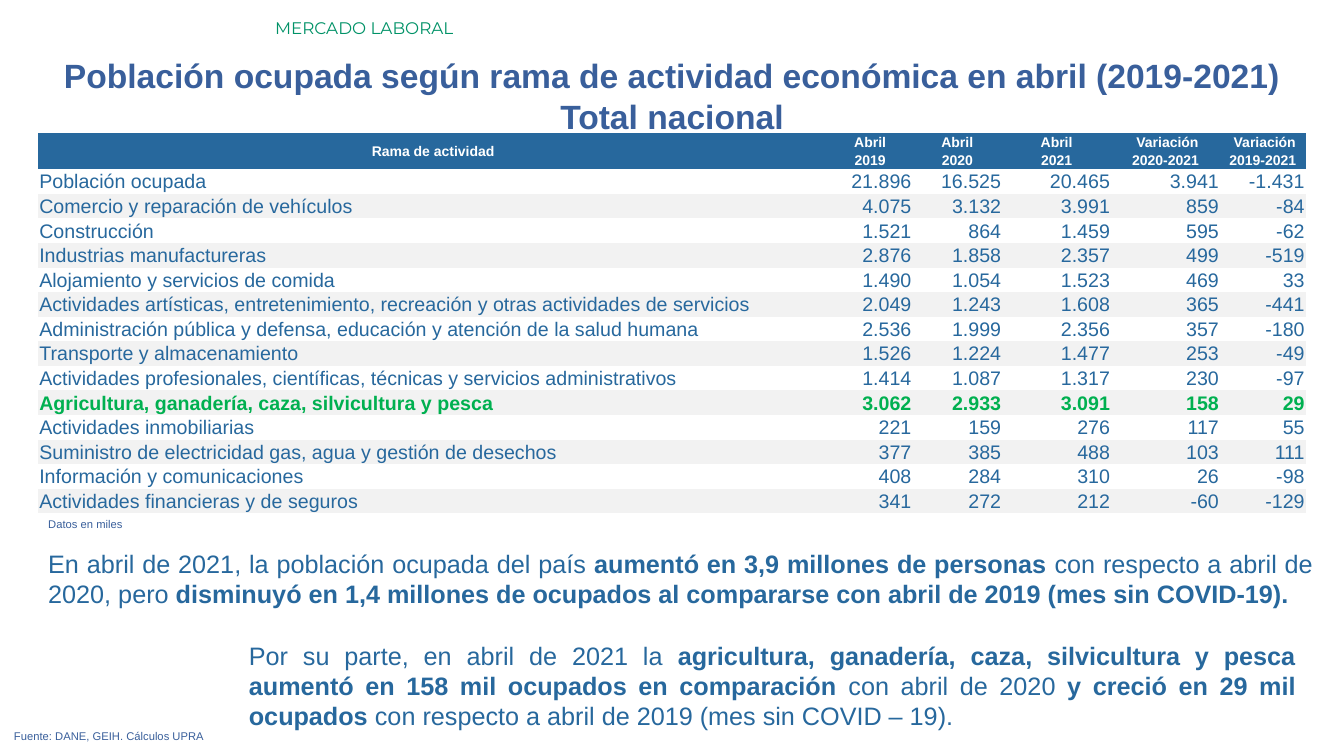
from dataclasses import dataclass

from pptx import Presentation
from pptx.dml.color import RGBColor
from pptx.enum import text
from pptx.oxml import ns
from pptx.util import Inches, Pt

LEFT, CENTER, RIGHT, JUSTIFY = (
    text.PP_ALIGN.LEFT, text.PP_ALIGN.CENTER, text.PP_ALIGN.RIGHT, text.PP_ALIGN.JUSTIFY)


@dataclass(frozen=True)
class Theme:
    blue: str = "27689D"
    title_blue: str = "395F9B"
    teal: str = "009267"
    green: str = "00B050"
    white: str = "FFFFFF"
    band: str = "F2F2F2"
    font: str = "Arial"
    label_font: str = "Montserrat"
    title_size: int = 24
    body_size: int = 18
    cell_size: int = 14
    label_size: int = 12
    header_size: int = 10
    note_size: int = 8
    plain_table: str = "{2D5ABB26-0587-4C30-8999-92F81FD0307C}"


class SlideBuilder:
    def __init__(self, page, theme):
        self.page = page
        self.theme = theme

    def add_span(self, para, words, size, color, bold=False, font=None):
        span = para.add_run()
        span.text = words
        span.font.name = font or self.theme.font
        span.font.size = Pt(size)
        span.font.bold = bold
        span.font.color.rgb = RGBColor.from_string(color)

    def add_text(self, bounds, paragraphs, size, color, align=JUSTIFY, font=None):
        box = self.page.shapes.add_textbox(*map(Inches, bounds))
        frame = box.text_frame
        frame.word_wrap = True
        frame.auto_size = text.MSO_AUTO_SIZE.SHAPE_TO_FIT_TEXT
        for index, spans in enumerate(paragraphs):
            para = frame.add_paragraph() if index else frame.paragraphs[0]
            para.alignment = align
            for words, bold in spans:
                self.add_span(para, words, size, color, bold, font)

    def fill_cell(self, cell, words, size, color, align, bold, fill):
        cell.margin_left = cell.margin_right = cell.margin_top = Inches(0.01)
        cell.margin_bottom = 0
        cell.vertical_anchor = text.MSO_ANCHOR.MIDDLE
        if fill:
            cell.fill.solid()
            cell.fill.fore_color.rgb = RGBColor.from_string(fill)
        else:
            cell.fill.background()
        para = cell.text_frame.paragraphs[0]
        para.alignment = align
        if words:
            self.add_span(para, words, size, color, bold)

    def add_table(self, bounds, widths, header, rows, highlight):
        theme = self.theme
        count = len(header) + len(rows)
        frame = self.page.shapes.add_table(count, len(widths), *map(Inches, bounds))
        table = frame.table
        table.first_row = table.horz_banding = False
        frame.element.find(".//" + ns.qn("a:tableStyleId")).text = theme.plain_table
        for column, width in zip(table.columns, widths):
            column.width = Inches(width)
        header_height = 0.18
        body_height = (bounds[3] - header_height * len(header)) / len(rows)
        for index, row in enumerate(table.rows):
            row.height = Inches(header_height if index < len(header) else body_height)
        for index, labels in enumerate(header):
            for column, words in enumerate(labels):
                self.fill_cell(table.cell(index, column), words, theme.header_size,
                               theme.white, CENTER, True, theme.blue)
        table.cell(0, 0).merge(table.cell(len(header) - 1, 0))
        for index, values in enumerate(rows):
            special = values[0] == highlight
            for column, words in enumerate(values):
                self.fill_cell(table.cell(index + len(header), column), words,
                               theme.cell_size, theme.green if special else theme.blue,
                               RIGHT if column else LEFT, special,
                               theme.band if index % 2 else None)


HEADER = [
    (" Rama de actividad ", "Abril", "Abril", "Abril", " Variación", " Variación"),
    ("", "2019", "2020", "2021", "2020-2021", "2019-2021"),
]
FARMING = "Agricultura, ganadería, caza, silvicultura y pesca"
ROWS = [
    ("Población ocupada", "21.896", "16.525", "20.465", "3.941", "-1.431"),
    ("Comercio y reparación de vehículos", "4.075", "3.132", "3.991", "859", "-84"),
    ("Construcción", "1.521", "864", "1.459", "595", "-62"),
    ("Industrias manufactureras", "2.876", "1.858", "2.357", "499", "-519"),
    ("Alojamiento y servicios de comida", "1.490", "1.054", "1.523", "469", "33"),
    ("Actividades artísticas, entretenimiento, recreación y otras actividades de servicios",
     "2.049", "1.243", "1.608", "365", "-441"),
    ("Administración pública y defensa, educación y atención de la salud humana",
     "2.536", "1.999", "2.356", "357", "-180"),
    ("Transporte y almacenamiento", "1.526", "1.224", "1.477", "253", "-49"),
    ("Actividades profesionales, científicas, técnicas y servicios administrativos",
     "1.414", "1.087", "1.317", "230", "-97"),
    (FARMING, "3.062", "2.933", "3.091", "158", "29"),
    ("Actividades inmobiliarias", "221", "159", "276", "117", "55"),
    ("Suministro de electricidad gas, agua y gestión de desechos",
     "377", "385", "488", "103", "111"),
    ("Información y comunicaciones", "408", "284", "310", "26", "-98"),
    ("Actividades financieras y de seguros", "341", "272", "212", "-60", "-129"),
]
NATIONAL = [
    ("En abril de 2021, la población ocupada del país ", False),
    ("aumentó en 3,9 millones de personas ", True),
    ("con respecto a abril de 2020, pero ", False),
    ("disminuyó en 1,4 millones de ocupados al compararse con abril de 2019 "
     "(mes sin COVID-19).", True),
]
RURAL = [
    ("Por su parte, en abril de 2021 la", False),
    (" agricultura, ganadería, caza, silvicultura y pesca aumentó en 158 mil ocupados "
     "en comparación ", True),
    ("con abril de 2020", False),
    (" y creció en 29 mil ocupados ", True),
    ("con respecto a abril de 2019 (mes sin COVID – 19).", False),
]
TITLE = [
    [("Población ocupada según rama de actividad económica en abril (2019-2021)", True)],
    [("Total nacional", True)],
]


def main():
    deck = Presentation()
    deck.slide_width, deck.slide_height = Inches(13.33), Inches(7.5)
    theme = Theme()
    builder = SlideBuilder(deck.slides.add_slide(deck.slide_layouts[6]), theme)
    builder.add_text((2.63, 0.13, 10.7, 0.3), [[("MERCADO LABORAL", False)]],
                     theme.label_size, theme.teal, LEFT, theme.label_font)
    builder.add_text((0, 0.5, 13.33, 0.91), TITLE, theme.title_size, theme.title_blue, CENTER)
    builder.add_text((0.38, 5.39, 12.74, 0.71), [NATIONAL], theme.body_size, theme.blue)
    builder.add_text((0.04, 7.19, 12.91, 0.24),
                     [[("Fuente: DANE, GEIH. Cálculos UPRA", False)]],
                     theme.note_size, theme.title_blue)
    builder.add_text((0.38, 5.08, 12.91, 0.24), [[("Datos en miles", False)]],
                     theme.note_size, theme.title_blue)
    builder.add_table((0.38, 1.32, 12.57, 3.77), (7.83, 0.84, 0.89, 1.08, 1.08, 0.85),
                      HEADER, ROWS, FARMING)
    builder.add_text((2.37, 6.3, 10.58, 1.01), [RURAL], theme.body_size, theme.blue)
    deck.save("out.pptx")


if __name__ == "__main__":
    main()
